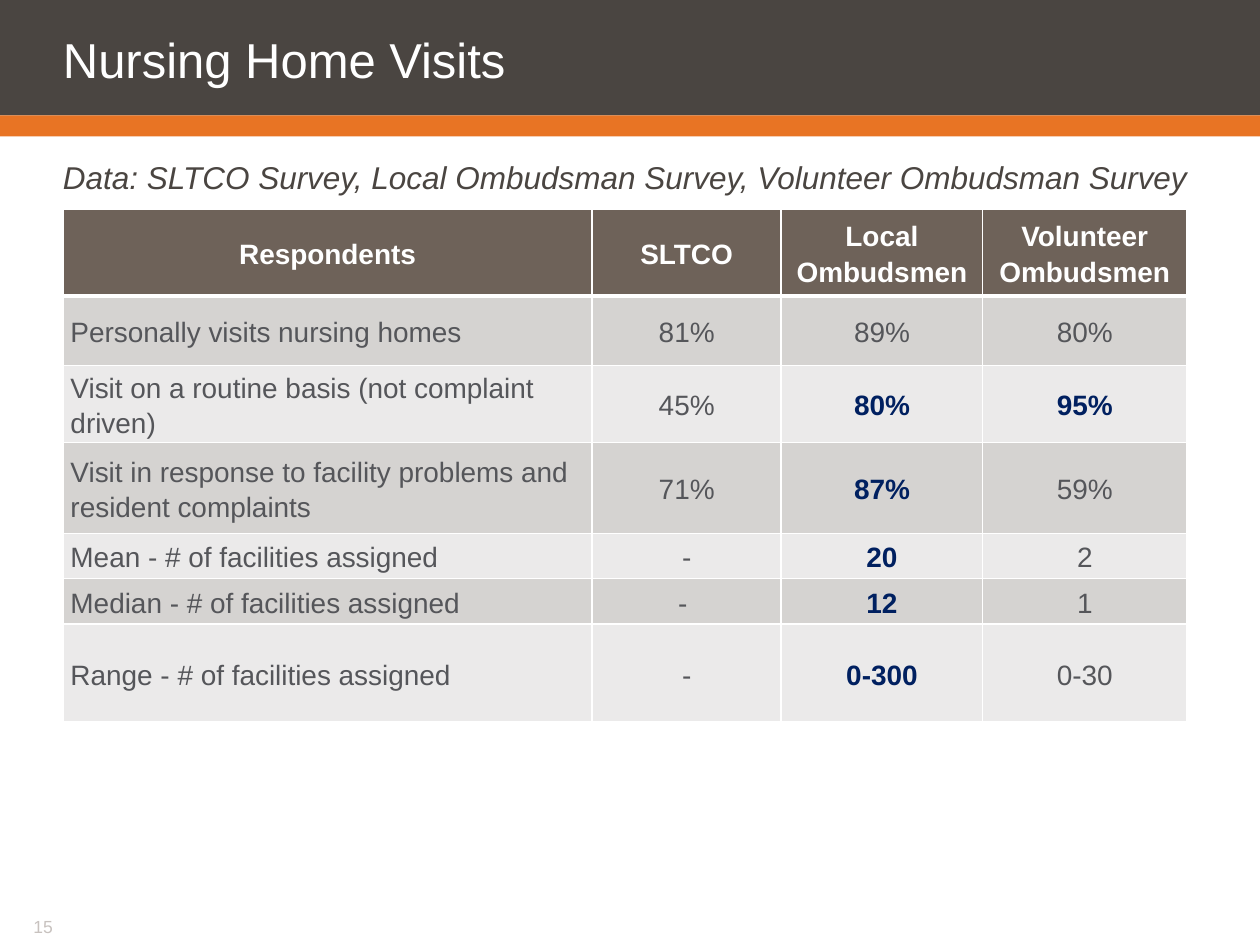
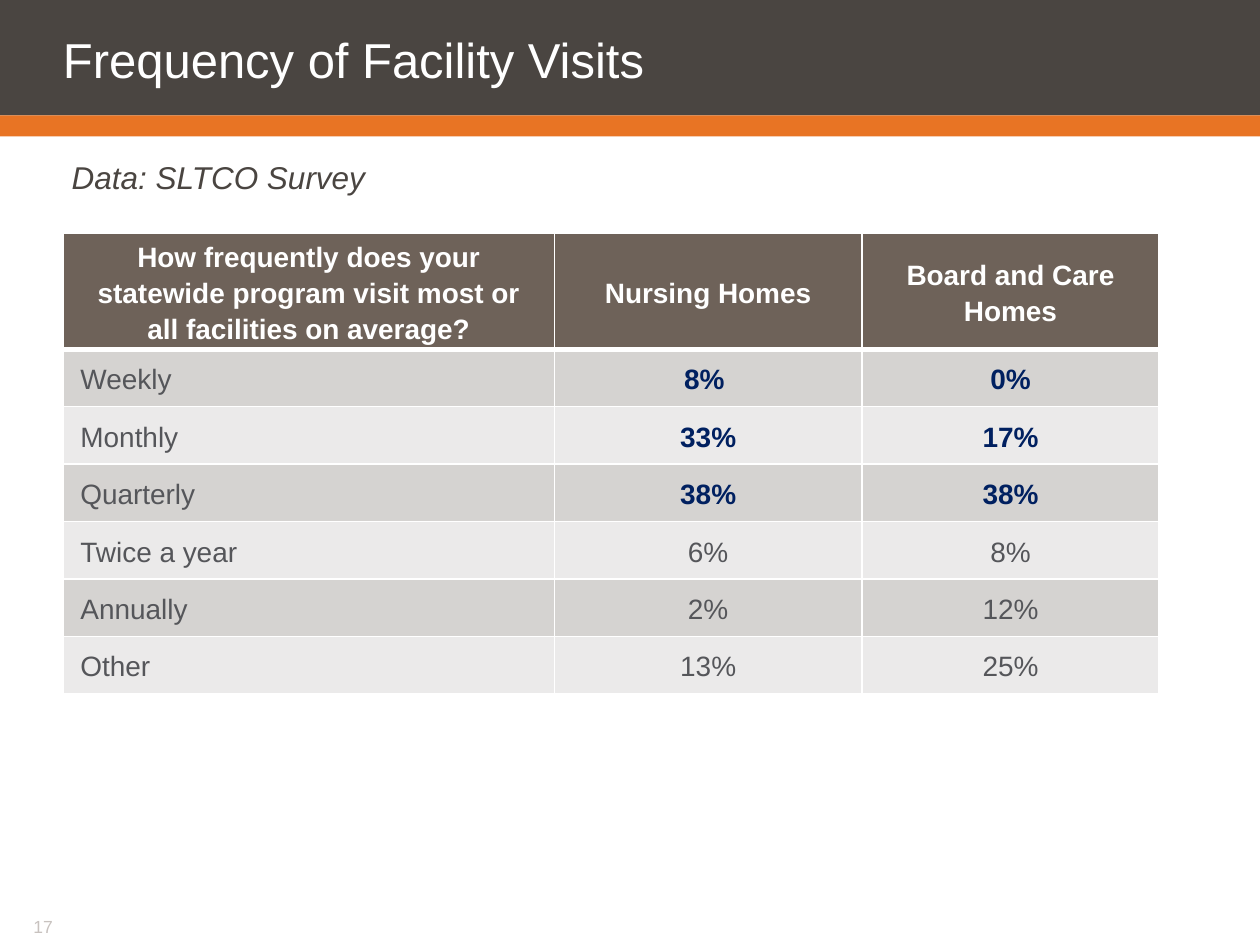
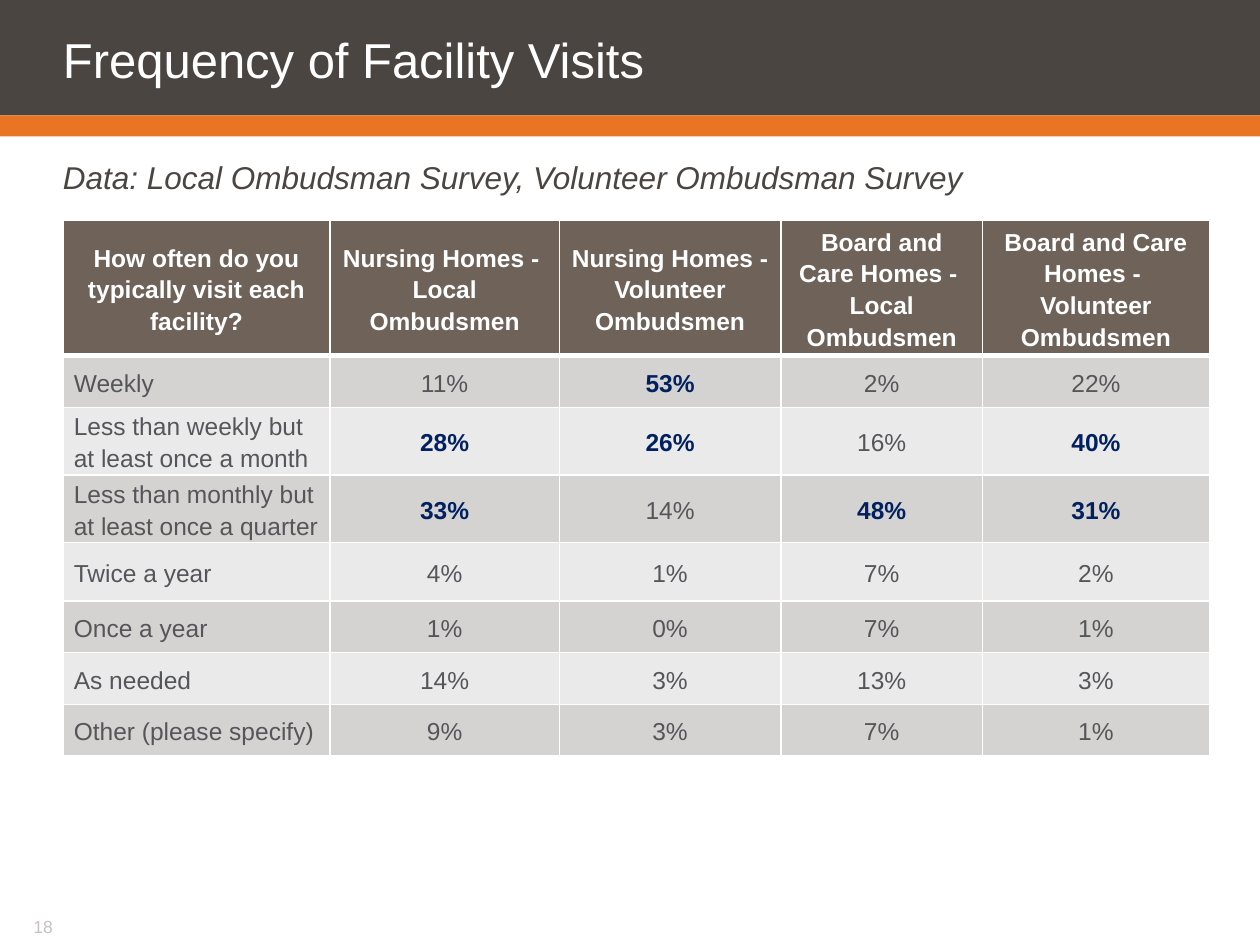
from lxml import etree
from pptx import Presentation
from pptx.dml.color import RGBColor
from pptx.enum.shapes import MSO_SHAPE
from pptx.enum.text import MSO_ANCHOR, PP_ALIGN
from pptx.oxml.ns import qn
from pptx.util import Pt

RECTANGLE = MSO_SHAPE.RECTANGLE
TOP, MIDDLE = MSO_ANCHOR.TOP, MSO_ANCHOR.MIDDLE
LEFT, CENTER = PP_ALIGN.LEFT, PP_ALIGN.CENTER

FONT = "Arial"
WHITE = RGBColor(0xFF, 0xFF, 0xFF)
CHARCOAL = RGBColor(0x4A, 0x45, 0x41)
ORANGE = RGBColor(0xE8, 0x74, 0x24)
PALE_GREY = RGBColor(0xC8, 0xC2, 0xBF)
HEADER_BROWN = RGBColor(0x6E, 0x62, 0x59)
BODY_GREY = RGBColor(0x55, 0x56, 0x5A)
NAVY = RGBColor(0x00, 0x20, 0x60)
ROW_FILLS = [RGBColor(0xD5, 0xD3, 0xD1), RGBColor(0xEB, 0xEA, 0xEA)]

SLIDE_WIDTH, SLIDE_HEIGHT = 720, 540
TITLE_HEIGHT = 66
STRIPE_HEIGHT = 12
TABLE_LEFT = 36
RULE, HEADER_RULE = 1, 3

# Highlights are (row, column) positions, with the header as row 0.
SLIDES = [
    {
        "number": "15",
        "title": "Nursing Home Visits",
        "source": "Data: SLTCO Survey, Local Ombudsman Survey, Volunteer Ombudsman Survey",
        "top": 119.5,
        "columns": [302.4, 108, 115.2, 116.6],
        "row_heights": [49.7, 39.6, 39.6, 51.8, 25.9, 25.9, 56.2],
        "padding": 4.3,
        "size": 16,
        "rows": [
            ["Respondents", "SLTCO", "Local Ombudsmen", "Volunteer Ombudsmen"],
            ["Personally visits nursing homes", "81%", "89%", "80%"],
            ["Visit on a routine basis (not complaint driven)", "45%", "80%", "95%"],
            ["Visit in response to facility problems and resident complaints",
             "71%", "87%", "59%"],
            ["Mean - # of facilities assigned", "-", "20", "2"],
            ["Median - # of facilities assigned", "- ", "12", "1"],
            ["Range - # of facilities assigned", "-", "0-300", "0-30"],
        ],
        "highlights": {(2, 2), (2, 3), (3, 2), (4, 2), (5, 2), (6, 2)},
    },
    {
        "number": "17",
        "title": "Frequency of Facility Visits",
        "source": " Data: SLTCO Survey",
        "top": 133.4,
        "columns": [280.8, 175.7, 169.9],
        "row_heights": [47.5] + [32.8] * 6,
        "padding": 10,
        "size": 16,
        "rows": [
            ["How frequently does your statewide program visit most or all "
             "facilities on average?", "Nursing Homes", "Board and Care Homes"],
            ["Weekly", "8% ", "0%"],
            ["Monthly", "33%", "17%"],
            ["Quarterly", "38%", "38%"],
            ["Twice a year", "6%", "8%"],
            ["Annually", "2%", "12%"],
            ["Other", "13%", "25%"],
        ],
        "highlights": {(1, 1), (1, 2), (2, 1), (2, 2), (3, 1), (3, 2)},
    },
    {
        "number": "18",
        "title": "Frequency of Facility Visits",
        "source": "Data: Local Ombudsman Survey, Volunteer Ombudsman Survey",
        "top": 126,
        "columns": [152.6, 131, 126.7, 115.2, 129.6],
        "row_heights": [72, 29.5, 29.5, 29.5, 33.5, 29.5, 29.5, 29.5],
        "padding": 6.2,
        "size": 14,
        "rows": [
            ["How often do you typically visit each facility?",
             "Nursing Homes - \nLocal Ombudsmen",
             "Nursing Homes - \nVolunteer Ombudsmen",
             "Board and Care Homes - \nLocal Ombudsmen",
             "Board and Care Homes - \nVolunteer Ombudsmen"],
            ["Weekly", "11%", "53%", "2%", "22%"],
            ["Less than weekly but at least once a month", "28%", "26%", "16%", "40%"],
            ["Less than monthly but at least once a quarter", "33%", "14%", "48%", "31%"],
            ["Twice a year", "4%", "1%", "7%", "2%"],
            ["Once a year", "1%", "0%", "7%", "1%"],
            ["As needed", "14%", "3%", "13%", "3%"],
            ["Other (please specify)", "9%", "3%", "7%", "1%"],
        ],
        "highlights": {(1, 2), (2, 1), (2, 2), (2, 4), (3, 1), (3, 3), (3, 4)},
    },
]


def add_span(para, text, size, color, bold=False, italic=False):
    span = para.add_run()
    span.text = text
    span.font.name = FONT
    span.font.size = Pt(size)
    span.font.color.rgb = color
    span.font.bold = bold
    span.font.italic = italic


def add_band(page, top, height, color):
    band = page.shapes.add_shape(RECTANGLE, 0, Pt(top), Pt(SLIDE_WIDTH), Pt(height))
    band.shadow.inherit = False
    band.fill.solid()
    band.fill.fore_color.rgb = color
    band.line.fill.background()


def add_text(page, place, insets, text, size, color, anchor=TOP, italic=False):
    """Add a one-paragraph text box and return its paragraph."""
    box = page.shapes.add_textbox(*map(Pt, place))
    frame = box.text_frame
    frame.word_wrap = True
    frame.vertical_anchor = anchor
    (frame.margin_left, frame.margin_top,
     frame.margin_right, frame.margin_bottom) = map(Pt, insets)
    para = frame.paragraphs[0]
    add_span(para, text, size, color, italic=italic)
    return para


def add_frame(page, content):
    """Add the bands, title, data source and page number."""
    add_band(page, 0, TITLE_HEIGHT, CHARCOAL)
    add_band(page, TITLE_HEIGHT, STRIPE_HEIGHT, ORANGE)
    add_text(page, (12, 523.5, 138, 13), (7.2, 0, 7.2, 3.6),
             content["number"], 10, PALE_GREY)
    title = add_text(page, (0, 0, SLIDE_WIDTH, TITLE_HEIGHT), (36, 7.2, 7.2, 0),
                     content["title"], 28, WHITE, anchor=MIDDLE)
    title.line_spacing = Pt(28)
    add_text(page, (0, 88, SLIDE_WIDTH, 24), (36, 2, 0, 0),
             content["source"], 18, CHARCOAL, italic=True)


def add_borders(cell, row):
    widths = {
        "a:lnL": RULE,
        "a:lnR": RULE,
        "a:lnT": HEADER_RULE if row == 1 else RULE,
        "a:lnB": HEADER_RULE if row == 0 else RULE,
    }
    properties = cell._tc.get_or_add_tcPr()
    for tag, width in widths.items():
        line = etree.SubElement(properties, qn(tag), w=str(Pt(width)))
        fill = etree.SubElement(line, qn("a:solidFill"))
        etree.SubElement(fill, qn("a:srgbClr"), val=str(WHITE))


def fill_cell(cell, row, column, text, content):
    is_header = row == 0
    is_highlight = (row, column) in content["highlights"]
    add_borders(cell, row)
    cell.fill.solid()
    cell.fill.fore_color.rgb = HEADER_BROWN if is_header else ROW_FILLS[(row - 1) % 2]
    cell.vertical_anchor = MIDDLE
    cell.margin_left = cell.margin_right = Pt(content["padding"])
    cell.margin_top = cell.margin_bottom = 0
    color = WHITE if is_header else NAVY if is_highlight else BODY_GREY
    for index, line in enumerate(text.split("\n")):
        frame = cell.text_frame
        para = frame.add_paragraph() if index else frame.paragraphs[0]
        para.alignment = CENTER if is_header or column else LEFT
        para.line_spacing = 1.15
        add_span(para, line, content["size"], color, bold=is_header or is_highlight)


def add_survey_table(page, content):
    rows, columns, heights = content["rows"], content["columns"], content["row_heights"]
    table = page.shapes.add_table(
        len(rows), len(columns), Pt(TABLE_LEFT), Pt(content["top"]),
        Pt(sum(columns)), Pt(sum(heights))).table
    for column, width in enumerate(columns):
        table.columns[column].width = Pt(width)
    for row, texts in enumerate(rows):
        table.rows[row].height = Pt(heights[row])
        for column, text in enumerate(texts):
            fill_cell(table.cell(row, column), row, column, text, content)


def main():
    deck = Presentation()
    deck.slide_width, deck.slide_height = Pt(SLIDE_WIDTH), Pt(SLIDE_HEIGHT)
    blank = deck.slide_layouts[6]
    for content in SLIDES:
        page = deck.slides.add_slide(blank)
        add_frame(page, content)
        add_survey_table(page, content)
    deck.save("out.pptx")


if __name__ == "__main__":
    main()
